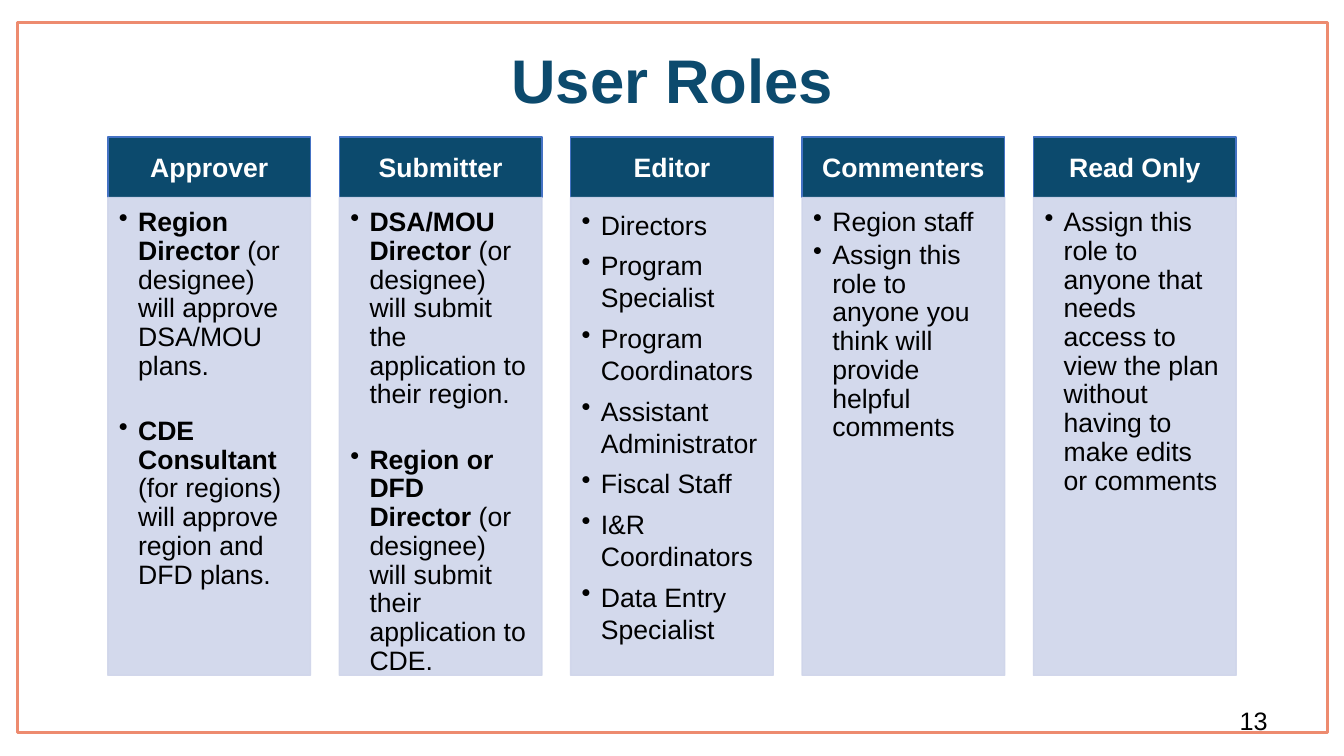
from lxml.etree import SubElement
from pptx import Presentation
from pptx.dml.color import RGBColor
from pptx.enum.shapes import MSO_SHAPE
from pptx.enum.text import MSO_ANCHOR, PP_ALIGN
from pptx.oxml.ns import qn
from pptx.util import Inches, Pt

TITLE = "User Roles"
NUMBER = "13"
ROLES = [
    ("Approver", [
        ("Region Director ", "(or designee) will approve DSA/MOU plans."),
        ("CDE Consultant ", "(for regions) will approve region and DFD plans."),
    ]),
    ("Submitter", [
        ("DSA/MOU Director ", "(or designee) will submit the application to their region."),
        ("Region or DFD Director ", "(or designee) will submit their application to CDE."),
    ]),
    ("Editor", [
        ("", "Directors"),
        ("", "Program Specialist"),
        ("", "Program Coordinators"),
        ("", "Assistant Administrator"),
        ("", "Fiscal Staff"),
        ("", "I&R Coordinators"),
        ("", "Data Entry Specialist"),
    ]),
    ("Commenters", [
        ("", "Region staff"),
        ("", "Assign this role to anyone you think will provide helpful comments"),
    ]),
    ("Read Only", [
        ("", "Assign this role to anyone that needs access to view the plan "
             "without having to make edits or comments"),
    ]),
]
COLORS = {"frame": "ED8B6F", "navy": "0C4A6D", "edge": "4472C4",
          "panel": "CFD5EA", "white": "FFFFFF", "black": "000000"}
FONT = "Arial"
LEFT, STEP, WIDE = 1.07, 2.295, 2.01
TOP, HEAD, BODY = 1.36, 0.6, 4.74


def color(name):
    return RGBColor.from_string(COLORS[name])


def style(para, size, name, bold=None, align=None):
    font = para.font
    font.name, font.size, font.bold = FONT, Pt(size), bold
    font.color.rgb = color(name)
    para.alignment = align


def fade(fill):
    fill_xml = fill.find(qn("a:solidFill"))
    SubElement(fill_xml[0], qn("a:alpha"), val="90000")


def add_box(slide, box, fill, line, width=1):
    shape = slide.shapes.add_shape(MSO_SHAPE.RECTANGLE, *map(Inches, box))
    shape.shadow.inherit = False
    if fill:
        shape.fill.solid()
        shape.fill.fore_color.rgb = color(fill)
    else:
        shape.fill.background()
    shape.line.color.rgb = color(line)
    shape.line.width = Pt(width)
    return shape


def set_frame(shape, anchor, insets):
    frame = shape.text_frame
    frame.word_wrap = True
    frame.vertical_anchor = anchor
    (frame.margin_left, frame.margin_top,
     frame.margin_right, frame.margin_bottom) = map(Inches, insets)
    return frame


def add_bullet(para, lead, rest):
    style(para, 19, "black", align=PP_ALIGN.LEFT)
    if lead:
        run = para.add_run()
        run.text = lead
        run.font.bold = True
    para.add_run().text = rest
    props = para._p.get_or_add_pPr()
    props.set("marL", str(Inches(0.19)))
    props.set("indent", str(-Inches(0.19)))
    bullet = props.makeelement(qn("a:buChar"), {"char": "•"})
    props.insert_element_before(bullet, "a:tabLst", "a:defRPr", "a:extLst")


def add_role(slide, left, name, items):
    head = add_box(slide, (left, TOP, WIDE, HEAD), "navy", "edge")
    frame = set_frame(head, MSO_ANCHOR.MIDDLE, (0.15, 0.08, 0.15, 0.08))
    frame.text = name
    style(frame.paragraphs[0], 19, "white", True, PP_ALIGN.CENTER)

    panel = add_box(slide, (left, TOP + HEAD, WIDE, BODY), "panel", "panel")
    fade(panel._element.spPr)
    fade(panel._element.spPr.find(qn("a:ln")))
    frame = set_frame(panel, MSO_ANCHOR.TOP, (0.11, 0.11, 0.15, 0.17))
    for i, (lead, rest) in enumerate(items):
        para = frame.paragraphs[0] if i == 0 else frame.add_paragraph()
        loose = name == "Editor"
        para.line_spacing = 1.0 if loose else 0.9
        para.space_before = Pt(3.4 if loose else 0)
        para.space_after = Pt(26 if lead and i < len(items) - 1 else 2.9)
        add_bullet(para, lead, rest)


def main():
    deck = Presentation()
    deck.slide_width, deck.slide_height = Inches(13.33), Inches(7.5)
    slide = deck.slides.add_slide(deck.slide_layouts[5])

    border = add_box(slide, (0.17, 0.22, 13, 7.05), None, "frame", 2)
    slide.shapes._spTree.insert(2, border._element)

    title = slide.shapes.title
    title.left, title.top, title.width, title.height = map(Inches, (0.17, 0.1, 13, 1.45))
    title.text_frame.text = TITLE
    title.text_frame.vertical_anchor = MSO_ANCHOR.MIDDLE
    para = title.text_frame.paragraphs[0]
    style(para, 44, "navy", True, PP_ALIGN.CENTER)
    para.line_spacing = 0.9

    page = slide.shapes.add_textbox(*map(Inches, (9.56, 6.95, 3.11, 0.4)))
    page.text_frame.word_wrap = True
    page.text_frame.text = NUMBER
    style(page.text_frame.paragraphs[0], 18, "black", align=PP_ALIGN.RIGHT)

    for i, (name, items) in enumerate(ROLES):
        add_role(slide, LEFT + i * STEP, name, items)

    deck.save("out.pptx")


if __name__ == "__main__":
    main()
